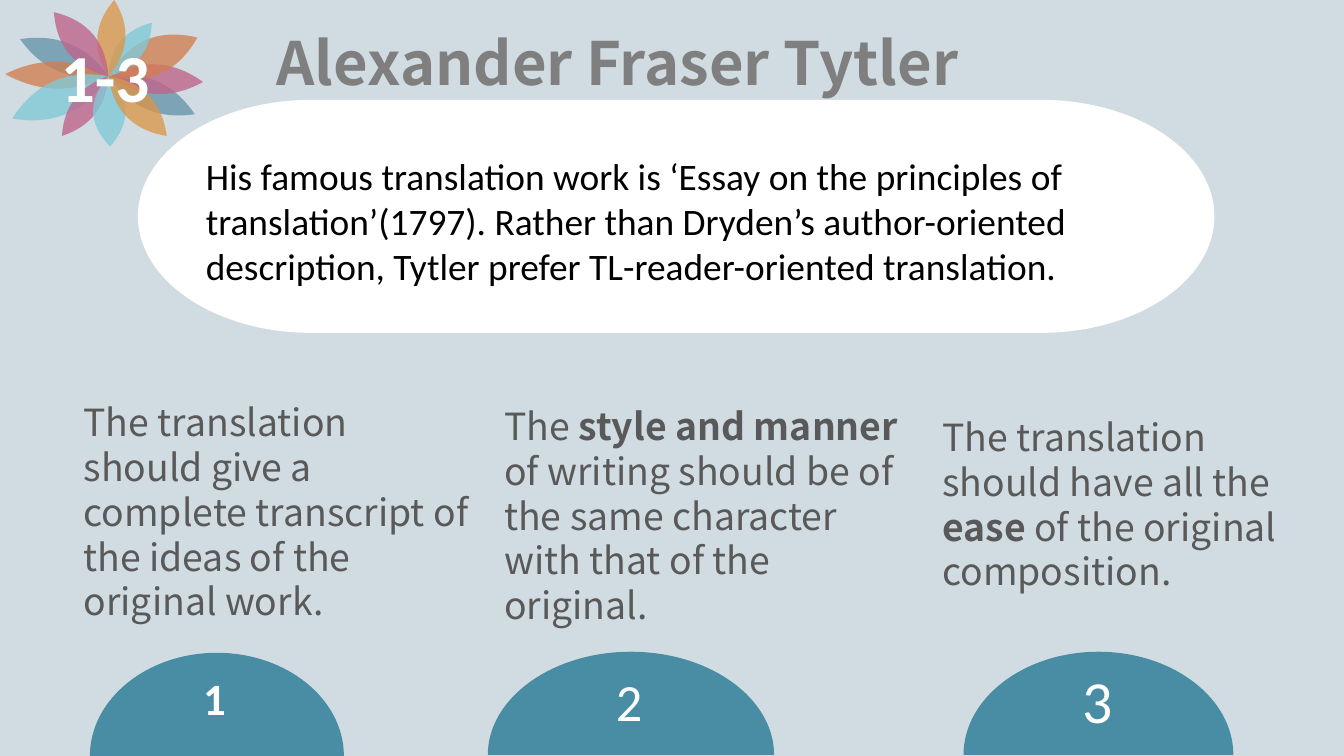
from math import atan2, degrees, hypot

from pptx import Presentation
from pptx.dml.color import RGBColor
from pptx.enum.shapes import MSO_SHAPE as SHAPE
from pptx.enum.text import MSO_AUTO_SIZE as AUTO, PP_ALIGN as ALIGN
from pptx.oxml.ns import qn
from pptx.util import Cm, Pt
from lxml import etree

SANS, CJK = "Calibri", "Noto Sans CJK SC"
WHITE, GREY, TEAL = "FFFFFF", "595959", "498DA4"
BLUE, ORANGE, PINK, CYAN, AMBER = "6694AB", "D27E50", "BF638A", "80CAD7", "DB9649"
ROUND = 0.55  # control point distance of a quarter ellipse

FLOWER_CENTRE = (2.05, 1.44)
# tip x, tip y, petal width, colour (cm)
PETALS = [
    (0.38, 0.74, 0.56, BLUE), (3.68, 2.16, 0.56, BLUE),
    (0.10, 1.40, 0.51, ORANGE), (3.84, 1.55, 0.56, PINK),
    (0.23, 2.24, 0.66, CYAN), (3.73, 0.71, 0.69, ORANGE),
    (1.17, 2.57, 0.48, PINK), (2.87, 0.43, 0.48, CYAN),
    (2.16, 0.00, 0.53, AMBER), (2.08, 2.77, 0.61, CYAN),
    (1.02, 0.23, 0.58, PINK), (3.15, 2.57, 0.58, AMBER),
]
# left, top, width
DOMES = [(1.70, 12.34, 4.80), (9.22, 12.32, 5.41), (18.21, 12.32, 5.10)]
# text, left, top, width, height, size, bold
NUMBERS = [
    ("1", 3.71, 12.55, 2.36, 1.09, 24, True),
    ("2", 11.51, 12.52, 2.67, 1.24, 28, False),
    ("3", 20.32, 12.42, 3.02, 1.37, 32, False),
]
# left, top, width, runs of (text, bold)
PRINCIPLES = [
    (1.45, 7.42, 7.65, [("The translation should give a complete transcript "
                         "of the ideas of the original work.", False)]),
    (9.40, 7.49, 7.77, [("The ", False), ("style and manner ", True),
                        ("of writing should be of the same character "
                         "with that of the original.", False)]),
    (17.68, 7.70, 7.34, [("The translation should have all the ", False),
                         ("ease", True),
                         (" of the original composition.", False)]),
]
ESSAY = ("His famous translation work is ‘Essay on the principles of "
         "translation’(1797). Rather than Dryden’s author-oriented "
         "description, Tytler prefer TL-reader-oriented translation.")


def rgb(value):
    return RGBColor.from_string(value)


def paint(sp, color, alpha=None):
    sp.shadow.inherit = False
    sp.fill.solid()
    sp.fill.fore_color.rgb = rgb(color)
    sp.line.fill.background()
    if alpha:
        clr = sp.element.spPr.find(qn("a:solidFill"))[0]
        etree.SubElement(clr, qn("a:alpha")).set("val", str(alpha * 1000))


def add_outline(shapes, left, top, start, segments):
    """Closed outline; a segment is one point (line) or three (Bézier curve)."""
    builder = shapes.build_freeform(Cm(start[0]), Cm(start[1]))
    builder.add_line_segments([(Cm(x), Cm(y)) for x, y in
                               (seg[-1] for seg in segments)], close=True)
    sp = builder.convert_to_shape(Cm(left), Cm(top))
    for line, seg in zip(list(sp.element.iter(qn("a:lnTo"))), segments):
        if len(seg) == 3:
            curve = etree.Element(qn("a:cubicBezTo"))
            for x, y in seg:
                etree.SubElement(curve, qn("a:pt"), x=str(Cm(x)), y=str(Cm(y)))
            line.getparent().replace(line, curve)
    return sp


def add_petal(shapes, tip_x, tip_y, w, color):
    """Upright leaf, turned so that it reaches from the centre to its tip."""
    cx, cy = FLOWER_CENTRE
    dx, dy = tip_x - cx, tip_y - cy
    h = hypot(dx, dy)
    near, far = w / 6, w * 5 / 6
    sp = add_outline(
        shapes, (cx + tip_x - w) / 2, (cy + tip_y - h) / 2, (w / 2, 0),
        [[(far, h / 6), (w, h / 3), (w, h / 2)],
         [(w, h * 2 / 3), (far, h * 5 / 6), (w / 2, h)],
         [(near, h * 5 / 6), (0, h * 2 / 3), (0, h / 2)],
         [(0, h / 3), (near, h / 6), (w / 2, 0)]])
    sp.rotation = degrees(atan2(dx, -dy)) % 360
    paint(sp, color, 78)


def add_dome(shapes, left, top, w, h=1.95):
    r = w / 2
    k, rise = r * ROUND, h * (1 - ROUND)
    sp = add_outline(shapes, left, top, (r, 0),
                     [[(r + k, 0), (w, rise), (w, h)], [(0, h)],
                      [(0, rise), (r - k, 0), (r, 0)]])
    paint(sp, TEAL)


def add_text(shapes, left, top, width, height, runs, size, font, color,
             align=ALIGN.LEFT):
    tf = shapes.add_textbox(Cm(left), Cm(top), Cm(width), Cm(height)).text_frame
    tf.word_wrap = True
    tf.auto_size = AUTO.SHAPE_TO_FIT_TEXT
    tf.margin_left = tf.margin_right = Cm(0.13)
    tf.margin_top = tf.margin_bottom = Cm(0.13)
    p = tf.paragraphs[0]
    p.alignment = align
    for text, bold in runs:
        r = p.add_run()
        r.text = text
        r.font.name, r.font.size, r.font.bold = font, Pt(size), bold
        r.font.color.rgb = rgb(color)


def main():
    prs = Presentation()
    prs.slide_width, prs.slide_height = Cm(25.4), Cm(14.29)
    s = prs.slides.add_slide(prs.slide_layouts[6])
    s.background.fill.solid()
    s.background.fill.fore_color.rgb = rgb("D1DCE2")

    # Flower and title
    flower = s.shapes.add_group_shape()
    for petal in PETALS:
        add_petal(flower.shapes, *petal)
    add_text(s.shapes, 1.02, 0.53, 2.51, 1.52, [("1-3", True)], 36, SANS, WHITE)
    add_text(s.shapes, 4.57, 0.36, 14.2, 1.6, [("Alexander Fraser Tytler", True)],
             32, CJK, "7F7F7F", ALIGN.CENTER)

    # Numbered domes
    for dome in DOMES:
        add_dome(s.shapes, *dome)
    for text, left, top, width, height, size, bold in NUMBERS:
        add_text(s.shapes, left, top, width, height, [(text, bold)],
                 size, SANS, WHITE)

    # Three principles
    for left, top, width, runs in PRINCIPLES:
        add_text(s.shapes, left, top, width, 3.63, runs, 20, CJK, GREY)

    # Essay panel
    essay = s.shapes.add_group_shape()
    panel = essay.shapes.add_shape(SHAPE.FLOWCHART_TERMINATOR,
                                   Cm(2.62), Cm(1.9), Cm(20.32), Cm(4.38))
    paint(panel, WHITE)
    panel.line.color.rgb = rgb(WHITE)
    panel.line.width = Pt(0.75)
    add_text(essay.shapes, 3.76, 2.77, 19.08, 2.82, [(ESSAY, False)],
             20, SANS, "000000")

    prs.save("out.pptx")


if __name__ == "__main__":
    main()
